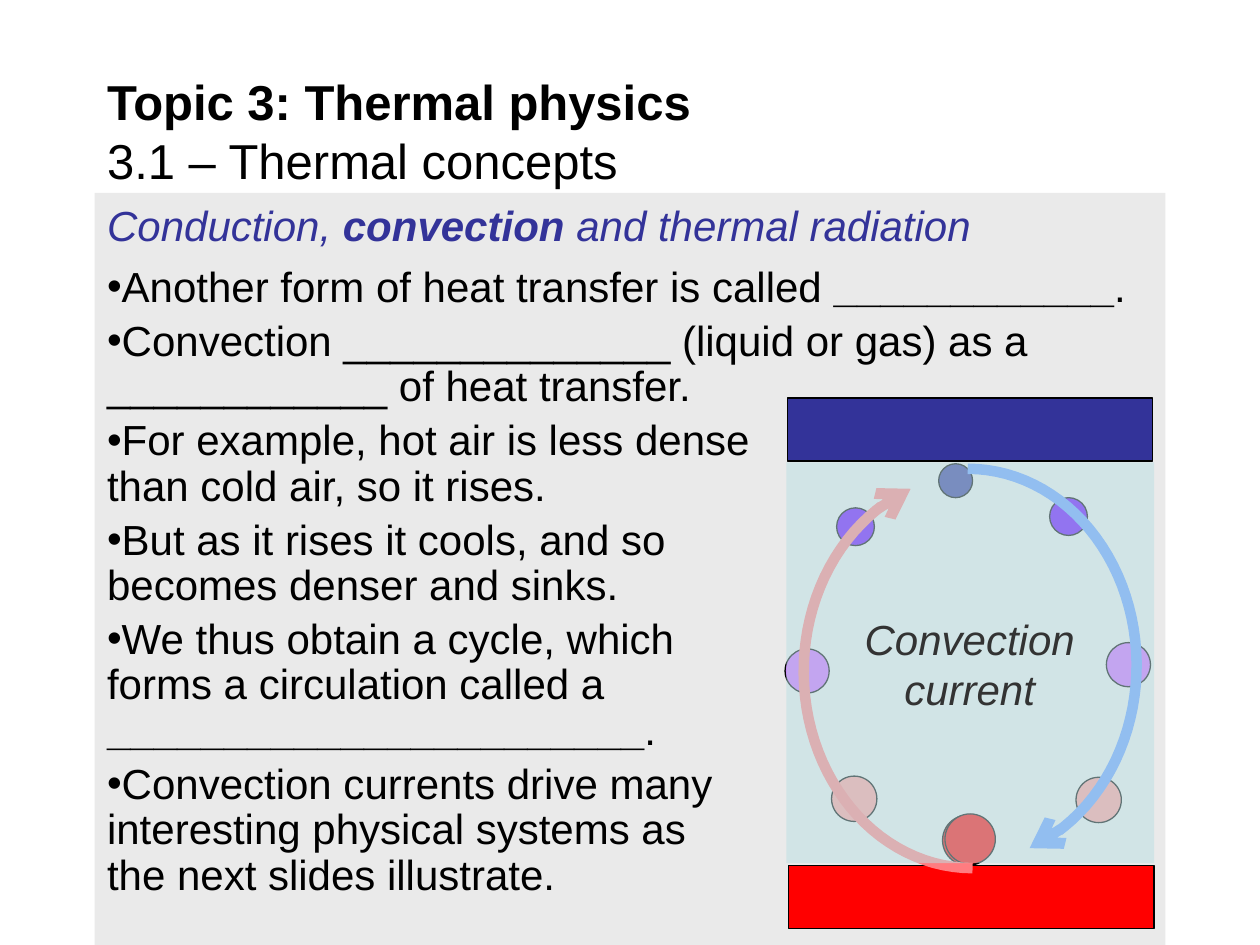
from math import cos, radians, sin

from lxml.etree import SubElement
from pptx import Presentation
from pptx.dml.color import RGBColor
from pptx.enum.shapes import MSO_SHAPE as Shape
from pptx.enum.text import MSO_ANCHOR as Anchor, MSO_AUTO_SIZE as AutoSize, PP_ALIGN as Align
from pptx.oxml.ns import qn
from pptx.util import Pt

COLORS = {
    "panel": "EAEAEA", "black": "000000", "heading": "333399", "caption": "333333",
    "hot": "FF0000", "warm": "FF9999", "mild": "CC66FF", "cool": "6600FF",
    "cold": "333399", "rising": "FF7C80", "sinking": "6699FF", "fluid": "BBE0E3",
}
FONT = "Arial"
BREAK = "\n"

TITLE = ("Topic 3: Thermal physics", "3.1 – Thermal concepts")
# Each part is (text, bold)
HEADING = [("Conduction, ", False), ("convection ", True), ("and thermal radiation", False)]
BULLETS = [
    [("Another form of heat transfer is called ", False), ("____________", True), (".", False)],
    [("Convection ______________ (liquid or gas) as a ____________ of heat transfer.", False)],
    [("For example, hot air is less dense", False), (BREAK, False),
     ("than cold air, so it rises.", False)],
    [("But as it rises it cools, and so", False), (BREAK, False),
     ("becomes denser and sinks.", False)],
    [("We thus obtain a cycle, which", False), (BREAK, False),
     ("forms a circulation called a", False), (BREAK, False),
     ("_______________________", True), (".", False)],
    [("Convection currents drive many", False), (BREAK, False),
     ("interesting physical systems as", False), (BREAK, False),
     ("the next slides illustrate.", False)],
]
CAPTION = "Convection current"

# left, top, color
PLATES = [(450.7, 494.6, "hot"), (450, 227.5, "cold")]
PLATE_SIZE = (208.8, 36)
PARCELS = [
    (538.6, 465.8, "hot"), (475.2, 443.5, "warm"), (448.6, 370.8, "mild"),
    (478.1, 290.2, "cool"), (536.4, 265, "cold"), (599.8, 284.4, "cool"),
    (632.2, 367.2, "mild"), (614.9, 444.2, "warm"), (540, 465.1, "hot"),
]
DIAMETERS = {"hot": 28.8, "warm": 25.9, "mild": 25.2, "cool": 21.6, "cold": 19.4}
# center x, center y, start angle, color
CURRENTS = [(555.8, 383.8, 90, "rising"), (553, 380.2, -90, "sinking")]
RADIUS_X, RADIUS_Y = 96.5, 112.3
SWEEP, STEPS = 158.5, 48


def rgb(name):
    return RGBColor.from_string(COLORS[name])


def place(shape, left, top, width, height):
    shape.left, shape.top, shape.width, shape.height = map(Pt, (left, top, width, height))


def style_font(font, size, color, bold=False, italic=False):
    font.name, font.size = FONT, Pt(size)
    font.bold, font.italic = bold, italic
    font.color.rgb = rgb(color)


def add_solid(slide, kind, box, color, outlined=True):
    shape = slide.shapes.add_shape(kind, *map(Pt, box))
    shape.shadow.inherit = False
    shape.fill.solid()
    shape.fill.fore_color.rgb = rgb(color)
    if outlined:
        shape.line.color.rgb = rgb("black")
        shape.line.width = Pt(0.75)
    else:
        shape.line.fill.background()
    return shape


def add_parts(paragraph, parts, color, italic=False):
    for text, bold in parts:
        if text == BREAK:
            paragraph.add_line_break()
            continue
        run = paragraph.add_run()
        run.text = text
        style_font(run.font, 24, color, bold, italic)


def set_bullet(paragraph, char=None):
    """Put the paragraph flush left, with the bullet char or with none."""
    props = paragraph._p.get_or_add_pPr()
    props.set("marL", "0")
    props.set("indent", "0")
    if char:
        SubElement(props, qn("a:buFont"), typeface=FONT)
        SubElement(props, qn("a:buChar"), char=char)
    else:
        SubElement(props, qn("a:buNone"))


def add_title(slide):
    title = slide.shapes.title
    place(title, 54, 41.8, 612, 65.5)
    frame = title.text_frame
    frame.text = "\v".join(TITLE)
    frame.auto_size = AutoSize.NONE
    frame.vertical_anchor = Anchor.MIDDLE
    frame.paragraphs[0].alignment = Align.LEFT
    for run, bold in zip(frame.paragraphs[0].runs, (True, False)):
        style_font(run.font, 28, "black", bold)


def add_body(slide):
    body = slide.placeholders[1]
    place(body, 54, 110.2, 612, 429.8)
    body.fill.solid()
    body.fill.fore_color.rgb = rgb("panel")
    frame = body.text_frame
    frame.auto_size = AutoSize.NONE
    frame.vertical_anchor = Anchor.TOP
    heading = frame.paragraphs[0]
    set_bullet(heading)
    heading.space_before = Pt(0)
    add_parts(heading, HEADING, "heading", italic=True)
    for index, parts in enumerate(BULLETS):
        paragraph = frame.add_paragraph()
        set_bullet(paragraph, "•")
        paragraph.space_before = Pt(5 if index else 6.5)
        paragraph.line_spacing = 0.9 if index else 1.0
        add_parts(paragraph, parts, "black")


def add_current(slide, center_x, center_y, start, color):
    """Draw a clockwise elliptical arc that ends in an arrowhead."""
    angles = [radians(start + SWEEP * step / STEPS) for step in range(STEPS + 1)]
    points = [(Pt(center_x + RADIUS_X * cos(a)), Pt(center_y + RADIUS_Y * sin(a)))
              for a in angles]
    builder = slide.shapes.build_freeform(*points[0])
    builder.add_line_segments(points[1:], close=False)
    arc = builder.convert_to_shape()
    arc.shadow.inherit = False
    arc.fill.background()
    arc.line.color.rgb = rgb(color)
    arc.line.width = Pt(6)
    line = arc.line._get_or_add_ln()
    SubElement(line, qn("a:round"))
    SubElement(line, qn("a:tailEnd"), type="arrow")


def add_diagram(slide):
    for left, top, color in PLATES:
        add_solid(slide, Shape.RECTANGLE, (left, top, *PLATE_SIZE), color)
    for left, top, color in PARCELS:
        size = DIAMETERS[color]
        add_solid(slide, Shape.OVAL, (left, top, size, size), color)
    for current in CURRENTS:
        add_current(slide, *current)
    fluid = add_solid(slide, Shape.RECTANGLE, (449.3, 264.2, 210.2, 229), "fluid", outlined=False)
    fluid_color = fluid._element.spPr.find(qn("a:solidFill"))[0]
    SubElement(fluid_color, qn("a:alpha"), val="52000")

    caption = slide.shapes.add_textbox(*map(Pt, (477.4, 347, 153.4, 64.8)))
    frame = caption.text_frame
    frame.word_wrap = True
    frame.text = CAPTION
    frame.paragraphs[0].alignment = Align.CENTER
    style_font(frame.paragraphs[0].runs[0].font, 24, "caption", italic=True)


def main():
    deck = Presentation()
    deck.slide_width, deck.slide_height = Pt(720), Pt(540)
    slide = deck.slides.add_slide(deck.slide_layouts[1])
    add_title(slide)
    add_body(slide)
    add_diagram(slide)
    deck.save("out.pptx")


if __name__ == "__main__":
    main()
